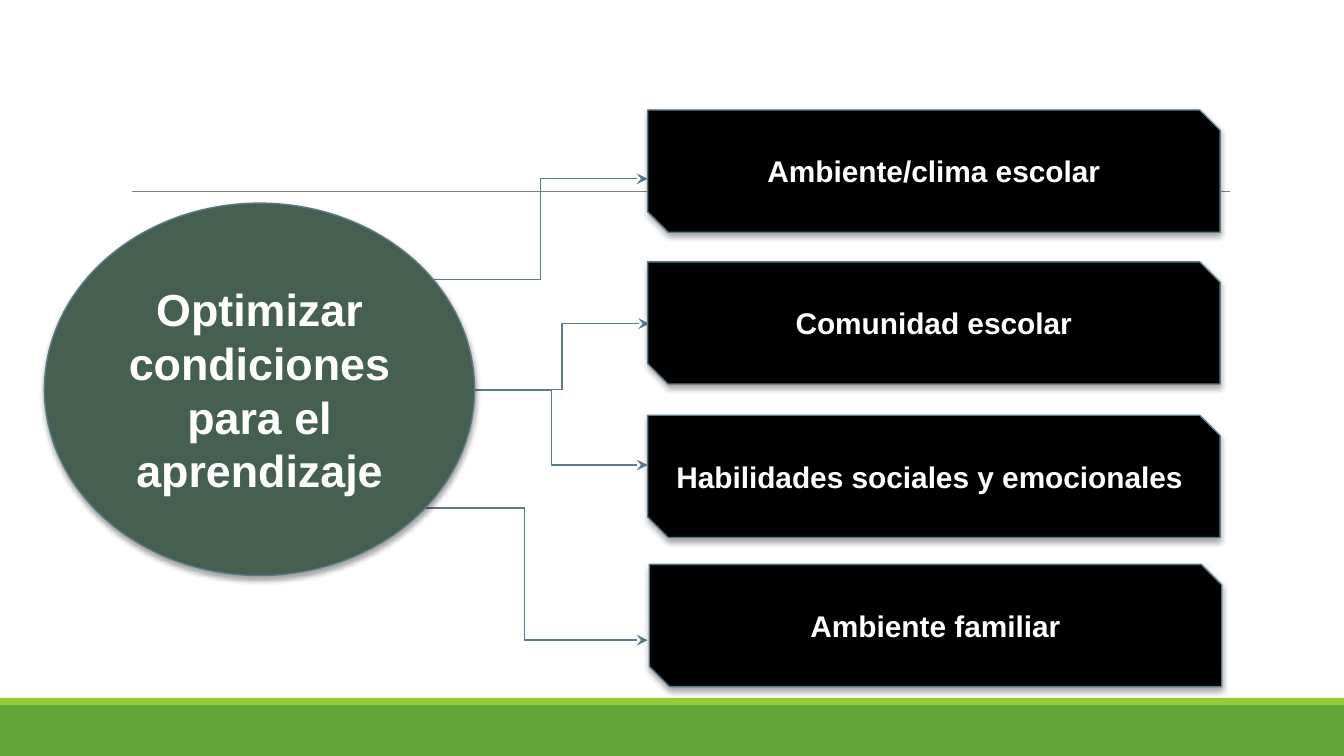
from lxml import etree
from pptx import Presentation
from pptx import util as u
from pptx.dml.color import RGBColor
from pptx.enum import shapes, text
from pptx.oxml import ns

# Content: lengths in centimetres
GOAL = "Optimizar condiciones para el aprendizaje"
GOAL_AREA = (0.84, 3.84, 8.13, 7.04)

# Condition, left and top of its box, start and end of its arrow
CONDITIONS = [
    ("Ambiente/clima escolar", (12.24, 2.08), (8.18, 5.28), (12.24, 3.38)),
    ("Comunidad escolar", (12.24, 4.95), (8.97, 7.37), (12.27, 6.12)),
    ("Habilidades sociales y emocionales ", (12.24, 7.85), (8.61, 7.37), (12.24, 8.79)),
    ("Ambiente familiar", (12.27, 10.67), (7.59, 9.6), (12.24, 12.1)),
]
CONDITION_SIZE = (10.82, 2.31)
SLIDE_SIZE = (25.4, 14.29)
STRIPE_TOP, BAND_TOP = 13.19, 13.33
RULE_ENDS = (2.49, 3.62), (23.24, 3.62)

THEME = dict(
    font="Arial", goal_size=24, condition_size=16, text="FFFFFF",
    goal="455F51", condition="000000", outline="5B7A88", outline_width=0.75,
    rule="808080", rule_width=0.5, band="63A537", stripe="99CB38", shadow="000000",
)


def color(name):
    return RGBColor.from_string(THEME[name])


def add_xml(parent, tag, **attributes):
    return etree.SubElement(parent, ns.qn(tag), attributes)


def add_block(slide, kind, area, fill):
    block = slide.shapes.add_shape(kind, *map(u.Cm, area))
    block.shadow.inherit = False
    block.fill.solid()
    block.fill.fore_color.rgb = color(fill)
    block.line.fill.background()
    return block


def outline_and_shadow(block):
    block.line.color.rgb = color("outline")
    block.line.width = u.Pt(THEME["outline_width"])
    effects = block._element.spPr.find(ns.qn("a:effectLst"))
    shadow = add_xml(effects, "a:outerShdw", blurRad=str(u.Pt(3.1)), dist=str(u.Pt(1.8)),
                     dir="5400000", rotWithShape="0")
    tint = add_xml(shadow, "a:srgbClr", val=THEME["shadow"])
    add_xml(tint, "a:alpha", val="35000")


def write(block, wording, *, size, bold=True, align=text.PP_ALIGN.CENTER):
    frame = block.text_frame
    frame.word_wrap = True
    frame.vertical_anchor = text.MSO_ANCHOR.MIDDLE
    paragraph = frame.paragraphs[0]
    paragraph.alignment = align
    run = paragraph.add_run()
    run.text = wording
    run.font.name = THEME["font"]
    run.font.size = u.Pt(THEME[size])
    run.font.bold = bold
    run.font.color.rgb = color("text")


def add_line(slide, kind, start, end, ink, width, arrow=False):
    line = slide.shapes.add_connector(kind, *map(u.Cm, start + end))
    line.line.color.rgb = color(ink)
    line.line.width = u.Pt(THEME[width])
    if arrow:
        add_xml(line.line._get_or_add_ln(), "a:tailEnd", type="stealth")
    add_xml(line._element.spPr, "a:effectLst")


def main():
    deck = Presentation()
    deck.slide_width, deck.slide_height = map(u.Cm, SLIDE_SIZE)
    slide = deck.slides.add_slide(deck.slide_layouts[6])
    width, height = SLIDE_SIZE
    preset = shapes.MSO_SHAPE

    # Footer bands and title rule
    for top, bottom, fill in ((BAND_TOP, height, "band"), (STRIPE_TOP, BAND_TOP, "stripe")):
        add_block(slide, preset.RECTANGLE, (0, top, width, bottom - top), fill)
    add_line(slide, shapes.MSO_CONNECTOR.STRAIGHT, *RULE_ENDS, "rule", "rule_width")

    # Arrows, behind the goal and the conditions
    for _, _, start, end in CONDITIONS:
        add_line(slide, shapes.MSO_CONNECTOR.ELBOW, start, end,
                 "outline", "outline_width", arrow=True)

    # Goal
    goal = add_block(slide, preset.OVAL, GOAL_AREA, "goal")
    outline_and_shadow(goal)
    write(goal, GOAL, size="goal_size")

    # Conditions
    for wording, corner, _, _ in CONDITIONS:
        condition = add_block(slide, preset.SNIP_2_DIAG_RECTANGLE,
                              corner + CONDITION_SIZE, "condition")
        outline_and_shadow(condition)
        write(condition, wording, size="condition_size")

    deck.save("out.pptx")


if __name__ == "__main__":
    main()
